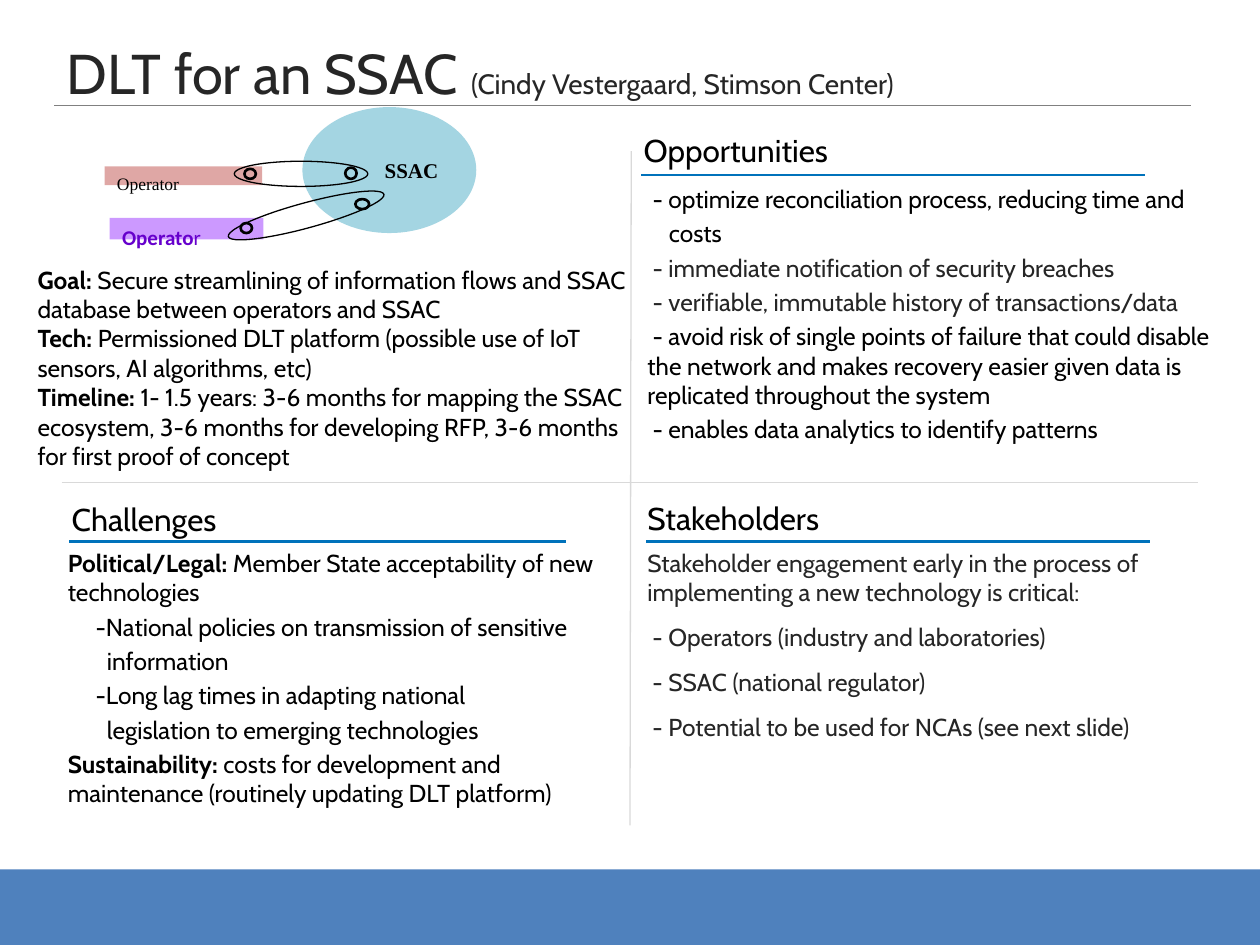
from lxml import etree
from pptx import Presentation
from pptx import util as u
from pptx.dml.color import RGBColor
from pptx.enum import shapes, text
from pptx.oxml.ns import qn

WIDTH, HEIGHT = 10, 7.5
COLORS = {"black": "000000", "ink": "262626", "accent": "0072BB", "rule": "808080",
          "grid": "D9D9D9", "footer": "4F81BD", "red": "C0504D", "teal": "4BACC6",
          "lilac": "CC99FF", "violet": "6600CC"}
MIDDLE_X, MIDDLE_Y = WIDTH / 2, 3.83
FLUSH, DASH, HANG, SUBDASH, SUBHANG = 0, 0.04, 0.17, 0.22, 0.31

TITLE = [("DLT for an SSAC ", 32), ("(Cindy Vestergaard, Stimson Center)", 16)]

# {PLACEHOLDER}
GOALS = [
    (FLUSH, [("Goal: ", "black", True),
             ("Secure streamlining of information flows and SSAC database between "
              "operators and SSAC", "black", False)]),
    (FLUSH, [("Tech: ", "black", True),
             ("Permissioned DLT platform (possible use of IoT sensors, AI algorithms, etc)",
              "black", False)]),
    (FLUSH, [("Timeline: ", "black", True),
             ("1- 1.5 years: 3-6 months for mapping the SSAC ecosystem, 3-6 months for "
              "developing RFP, 3-6 months for first proof of concept", "black", False)]),
]
OPPORTUNITIES = [
    (DASH, [("- optimize reconciliation process, reducing time and", "black", False)]),
    (HANG, [("costs", "black", False)]),
    (DASH, [("- immediate notification of security breaches", "ink", False)]),
    (DASH, [("- verifiable, immutable history of transactions/data", "ink", False)]),
    (DASH, [("- avoid risk of single points of failure that could disable the network and "
             "makes recovery easier given data is replicated throughout the system",
             "black", False)]),
    (DASH, [("- enables data analytics to identify patterns", "black", False)]),
]
CHALLENGES = [
    (FLUSH, [("Political/Legal:", "black", True),
             (" Member State acceptability of new technologies", "black", False)]),
    (SUBDASH, [("-National policies on transmission of sensitive", "black", False)]),
    (SUBHANG, [("information", "black", False)]),
    (SUBDASH, [("-Long lag times in adapting national", "black", False)]),
    (SUBHANG, [("legislation to emerging technologies", "black", False)]),
    (FLUSH, [("Sustainability:", "black", True),
             (" costs for development and maintenance (routinely updating DLT platform)",
              "black", False)]),
]
STAKEHOLDERS = [
    (FLUSH, [("Stakeholder engagement early in the process of implementing a new "
              "technology is critical:", "ink", False)]),
    (DASH, [("- Operators (industry and laboratories)", "ink", False)]),
    (DASH, [("- SSAC (national regulator)", "ink", False)]),
    (DASH, [("- Potential to be used for NCAs (see next slide)", "ink", False)]),
]
HEADINGS = [("Opportunities", 5.01, 0.99), ("Challenges", 0.47, 3.92),
            ("Stakeholders", 5.04, 3.91)]
BODIES = [(GOALS, (0.2, 2.05, 5, 1.75), 0, 0),
          (OPPORTUNITIES, (5.04, 1.41, 4.85, 2.52), 2.8, 0),
          (CHALLENGES, (0.44, 4.3, 4.52, 2.52), 2.8, 0),
          (STAKEHOLDERS, (5.04, 4.3, 4.84, 2.52), 2.8, 6)]
LINES = [((0.43, 0.84), (9.45, 0.84), "rule", 0.5),
         ((MIDDLE_X + 0.01, 1.2), (MIDDLE_X, 6.55), "grid", 0.75),
         ((0.49, MIDDLE_Y), (9.51, MIDDLE_Y), "grid", 0.75),
         ((5.09, 1.39), (9.09, 1.39), "accent", 1.5),
         ((5.13, 4.3), (9.13, 4.3), "accent", 1.5),
         ((0.55, 4.3), (4.49, 4.3), "accent", 1.5)]
LABELED = [
    ("RECTANGLE", (0.83, 1.32, 1.25, 0.15), "red", 50, "TOP", "LEFT",
     [("Operator", "Times New Roman", 10, "black", False)]),
    ("OVAL", (2.4, 0.85, 1.38, 1), "teal", 50, "MIDDLE", "RIGHT",
     [("SSAC", "Times New Roman", 12, "black", True)]),
    ("RECTANGLE", (0.87, 1.73, 1.22, 0.17), "lilac", 100, "TOP", "LEFT",
     [("Operato", "Calibri", 12, "violet", True), ("r", "Calibri", 12, "violet", False)]),
]
RINGS = [((1.86, 1.28, 1.06, 0.2), 0.75, 0), ((2.74, 1.33, 0.09, 0.09), 1.5, 0),
         ((1.94, 1.34, 0.09, 0.08), 1.5, 0), ((1.79, 1.61, 1.28, 0.2), 0.75, 344.8),
         ((2.82, 1.58, 0.11, 0.08), 1.5, 0), ((1.91, 1.77, 0.09, 0.08), 1.5, 0)]


def color(name):
    return RGBColor.from_string(COLORS[name])


def inches(box):
    return [u.Inches(value) for value in box]


def add_run(paragraph, words, size, ink, bold=False, face="Cabin"):
    run = paragraph.add_run()
    run.text = words
    run.font.name, run.font.size, run.font.bold = face, u.Pt(size), bold
    run.font.color.rgb = color(ink)


def add_box(slide, box):
    frame = slide.shapes.add_textbox(*inches(box)).text_frame
    frame.word_wrap = True
    return frame


def add_body(slide, paragraphs, box, before, after):
    frame = add_box(slide, box)
    for index, (indent, runs) in enumerate(paragraphs):
        paragraph = frame.add_paragraph() if index else frame.paragraphs[0]
        paragraph._p.get_or_add_pPr().set("indent", str(u.Inches(indent)))
        paragraph.space_before = u.Pt(before if index else 0)
        paragraph.space_after = u.Pt(after)
        for words, ink, bold in runs:
            add_run(paragraph, words, 14, ink, bold)


def add_line(slide, start, end, ink, width):
    line = slide.shapes.add_connector(shapes.MSO_CONNECTOR.STRAIGHT, *inches(start + end))
    line.line.color.rgb = color(ink)
    line.line.width = u.Pt(width)
    etree.SubElement(line._element.spPr, qn("a:effectLst"))


def add_filled(parent, kind, box, fill, opacity=100):
    shape = parent.shapes.add_shape(shapes.MSO_SHAPE[kind], *inches(box))
    shape.shadow.inherit = False
    shape.fill.solid()
    shape.fill.fore_color.rgb = color(fill)
    shape.line.fill.background()
    if opacity < 100:
        tint = shape._element.spPr.find(qn("a:solidFill"))[0]
        etree.SubElement(tint, qn("a:alpha")).set("val", str(opacity * 1000))
    return shape


def add_sketch(slide):
    sketch = slide.shapes.add_group_shape()
    for kind, box, fill, opacity, anchor, align, runs in LABELED:
        frame = add_filled(sketch, kind, box, fill, opacity).text_frame
        frame.word_wrap = True
        frame.vertical_anchor = text.MSO_ANCHOR[anchor]
        paragraph = frame.paragraphs[0]
        paragraph.alignment = text.PP_ALIGN[align]
        for words, face, size, ink, bold in runs:
            add_run(paragraph, words, size, ink, bold, face)
    for box, width, rotation in RINGS:
        ring = sketch.shapes.add_shape(shapes.MSO_SHAPE.OVAL, *inches(box))
        ring.shadow.inherit = False
        ring.fill.background()
        ring.line.color.rgb = color("black")
        ring.line.width = u.Pt(width)
        ring.rotation = rotation


def main():
    presentation = Presentation()
    presentation.slide_width, presentation.slide_height = inches((WIDTH, HEIGHT))
    slide = presentation.slides.add_slide(presentation.slide_layouts[6])
    add_filled(slide, "RECTANGLE", (0, HEIGHT * 0.92, WIDTH, HEIGHT * 0.08), "footer")
    for line in LINES:
        add_line(slide, *line)
    title = add_box(slide, (0.43, 0.13, 9.57, 0.71))
    title.vertical_anchor = text.MSO_ANCHOR.BOTTOM
    title.margin_bottom = 0
    for words, size in TITLE:
        add_run(title.paragraphs[0], words, size, "ink")
    for words, left, top in HEADINGS:
        heading = add_box(slide, (left, top, 4.08, 0.4))
        add_run(heading.paragraphs[0], words, 18, "black")
    for body in BODIES:
        add_body(slide, *body)
    add_sketch(slide)
    presentation.save("out.pptx")


if __name__ == "__main__":
    main()
